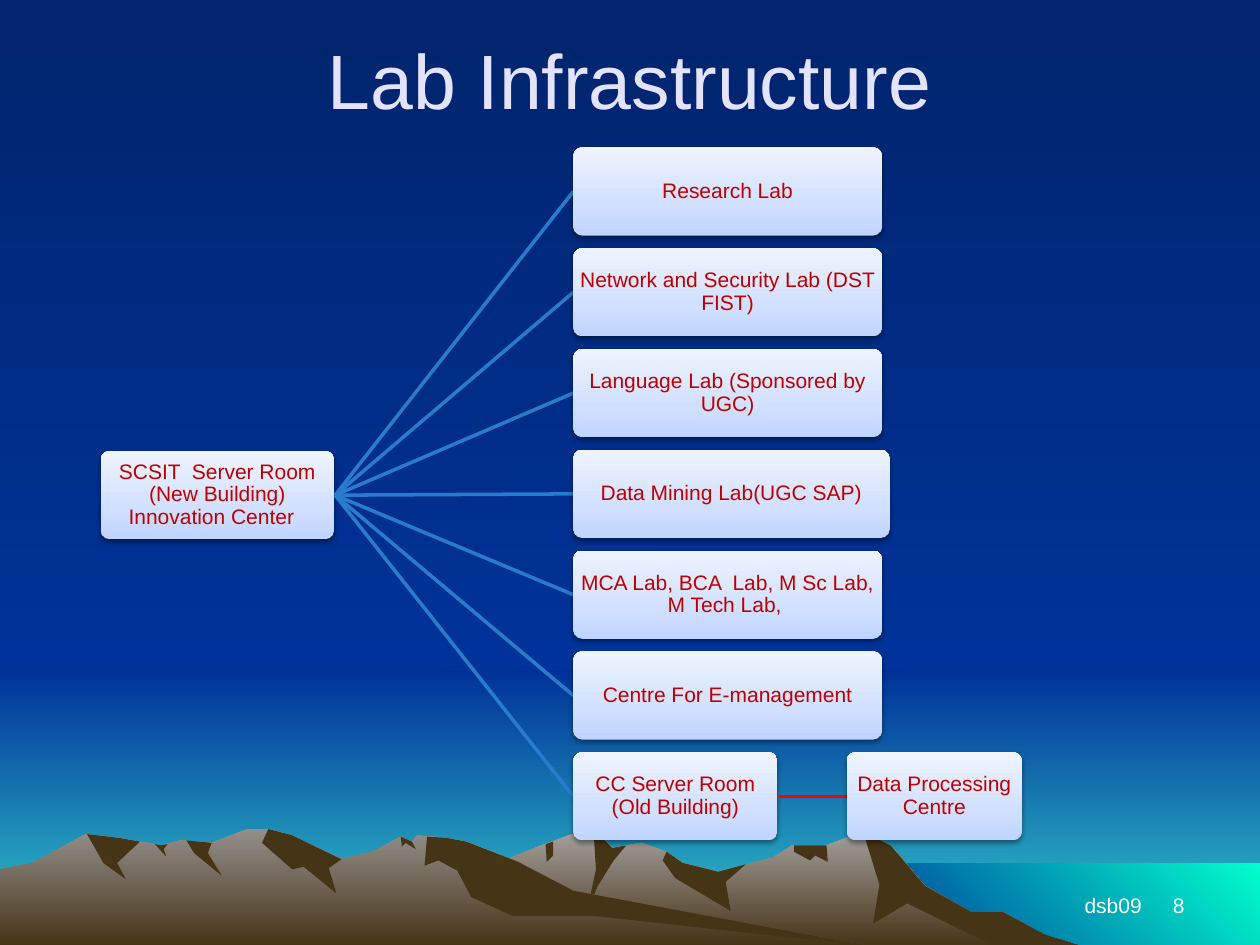
from copy import deepcopy

from lxml import etree
from pptx import Presentation
from pptx.dml.color import RGBColor
from pptx.enum import shapes, text
from pptx.oxml import ns
from pptx.util import Inches, Pt

NIGHT = RGBColor(0x00, 0x24, 0x6D)
BLUE = RGBColor(0x00, 0x33, 0x99)
TEAL = RGBColor(0x33, 0xCC, 0xCC)
AQUA = RGBColor(0x00, 0xFF, 0xCC)
STONE = RGBColor(0xA5, 0xA2, 0x9F)
SLATE = RGBColor(0x93, 0x8F, 0x8B)
BROWN = RGBColor(0x46, 0x34, 0x16)
LILAC = RGBColor(0xE3, 0xE3, 0xFF)
WHITE = RGBColor(0xFF, 0xFF, 0xFF)
CRIMSON = RGBColor(0xC0, 0x00, 0x00)
RED = RGBColor(0xFF, 0x00, 0x00)
LINK = RGBColor(0x29, 0x7B, 0xCC)
CARD = [(0, RGBColor(0xBF, 0xD4, 0xFF)), (0.35, RGBColor(0xD2, 0xE0, 0xFF)),
        (1, RGBColor(0xEE, 0xF3, 0xFF))]

WIDE, TALL = 10, 7.5
SHORE = 5.33
FLOOR = 7.51
GRAIN = 100
DOWN, RISE, SLANT = 270, 90, 45

HIGH = 0.7
STEP = 0.8
TOP = 1.17
LEFT = 4.55
HUB = (2.66, 3.93)
ANNEX = 6.72

LABS = [
    ("Research Lab", 2.45),
    ("Network and Security Lab (DST FIST)", 2.45),
    ("Language Lab (Sponsored by UGC)", 2.45),
    ("Data Mining Lab(UGC SAP)", 2.51),
    ("MCA Lab, BCA  Lab, M Sc Lab, M Tech Lab, ", 2.45),
    ("Centre For E-management", 2.45),
    ("CC Server Room (Old Building)", 1.62),
]

EAST = {2.58: 7.51, 3.27: 7.09, 3.55: 6.98, 4.05: 6.81, 4.3: 6.71, 4.65: 6.58,
        4.71: 6.58, 4.86: 6.73, 5.09: 6.69, 5.29: 6.76, 5.42: 6.85, 5.7: 6.92,
        6.13: 6.81, 6.29: 6.71, 6.56: 6.71, 6.85: 6.6, 7.07: 6.71, 7.34: 7.03,
        7.71: 7.24, 7.96: 7.24, 8.29: 7.42, 8.58: 7.51}
WEST = {0: 6.9, 0.26: 6.85, 0.46: 6.74, 0.68: 6.62, 0.94: 6.65, 1.28: 6.71,
        1.43: 6.67, 1.68: 6.69, 1.96: 6.58, 2.13: 6.58, 2.32: 6.63, 2.71: 6.82,
        2.96: 6.76, 3.18: 6.64, 3.27: 6.68, 3.31: 6.63, 3.54: 6.65, 3.7: 6.68,
        4.11: 6.84, 4.55: 7.07, 6.9: 7.51}

EASTERN = {
    (4.33, 4.39): [(4.39, 6.79), (4.34, 6.84)],
    (4.71, 4.97): [(4.87, 6.83), (4.74, 7.04), (4.65, 7.27), (4.73, 6.9)],
    (5.29, 5.92): [(5.76, 7), (5.8, 7.23), (5.36, 6.97), (5.26, 6.83)],
    (6.3, 6.56): [(6.57, 6.84), (6.47, 6.79), (6.43, 6.83), (6.3, 6.76)],
    (6.85, 8.58): [(7.92, 7.52), (7.2, 7.17), (6.93, 7.33), (6.98, 7.02)],
}
WESTERN = {
    (0.69, 1.11): [(0.93, 6.85), (1, 6.98), (0.82, 6.85), (0.77, 6.76)],
    (1.23, 1.33): [(1.3, 6.74), (1.32, 6.8)],
    (1.48, 1.68): [(1.65, 6.77), (1.76, 6.95), (1.54, 6.77)],
    (2.13, 2.71): [(2.61, 6.89), (2.67, 7.09), (2.41, 6.88), (2.32, 6.9),
                   (2.08, 6.69)],
    (3.18, 3.27): [(3.3, 6.74), (3.22, 6.69), (3.19, 6.72)],
    (3.39, 6.9): [(4.72, 7.27), (4.07, 7.27), (3.74, 7.12), (3.63, 6.91),
                  (3.48, 6.83), (3.37, 6.87)],
}
RANGES = [(EAST, STONE, EASTERN), (WEST, SLATE, WESTERN)]


def fade(fill, stops, angle):
    fill.gradient()
    fill.gradient_angle = angle
    for stop, (place, color) in zip(fill.gradient_stops, stops):
        stop.position = place
        stop.color.rgb = color


def blend(fill, first, last, angle):
    fade(fill, [(0, first), (1, last)], angle)


def bare(shape):
    shape.shadow.inherit = False
    shape.line.fill.background()
    return shape


def band(slide, box, first, last, angle):
    kind = shapes.MSO_SHAPE.RECTANGLE
    shape = bare(slide.shapes.add_shape(kind, *map(Inches, box)))
    blend(shape.fill, first, last, angle)


def trace(slide, points):
    grid = [(round(x * GRAIN), round(y * GRAIN)) for x, y in points]
    pen = slide.shapes.build_freeform(*grid[0], scale=Inches(1) / GRAIN)
    pen.add_line_segments(grid[1:], close=True)
    return bare(pen.convert_to_shape())


def level(sky, x):
    left = max(key for key in sky if key <= x)
    right = min(key for key in sky if key >= x)
    if left == right:
        return sky[x]
    share = (x - left) / (right - left)
    return sky[left] + share * (sky[right] - sky[left])


def crest(sky, start, end):
    inner = [x for x in sky if start < x < end]
    return [(x, level(sky, x)) for x in (start, *inner, end)]


def ridge(slide, sky, light, faces):
    first, last = min(sky), max(sky)
    base = [(last, FLOOR), (first, FLOOR)]
    rock = trace(slide, crest(sky, first, last) + base)
    blend(rock.fill, light, BROWN, DOWN)
    for (start, end), feet in faces.items():
        shade = trace(slide, crest(sky, start, end) + feet)
        shade.fill.solid()
        shade.fill.fore_color.rgb = BROWN


def write(frame, words, size, color, align, anchor):
    frame.word_wrap = True
    frame.vertical_anchor = anchor
    para = frame.paragraphs[0]
    para.alignment = align
    run = para.add_run()
    run.text = words
    run.font.name = "Arial"
    run.font.size = Pt(size)
    run.font.color.rgb = color
    return para


def label(slide, box, *style):
    write(slide.shapes.add_textbox(*map(Inches, box)).text_frame, *style)


def cast(shape):
    effect = shape.element.spPr.find(ns.qn("a:effectLst"))
    outer = etree.SubElement(effect, ns.qn("a:outerShdw"), blurRad=str(Pt(3.1)),
                             dist=str(Pt(1.6)), dir="5400000", rotWithShape="0")
    tint = etree.SubElement(outer, ns.qn("a:srgbClr"), val="000000")
    etree.SubElement(tint, ns.qn("a:alpha"), val="38000")


def node(slide, left, top, width, words):
    kind = shapes.MSO_SHAPE.ROUNDED_RECTANGLE
    box = map(Inches, (left, top, width, HIGH))
    shape = bare(slide.shapes.add_shape(kind, *box))
    shape.adjustments[0] = 0.1
    shape.fill.gradient()
    stops = shape.element.spPr.find(".//" + ns.qn("a:gsLst"))
    stops.append(deepcopy(stops[-1]))
    fade(shape.fill, CARD, RISE)
    cast(shape)
    frame = shape.text_frame
    frame.margin_left = frame.margin_right = Inches(0.01)
    frame.margin_top = frame.margin_bottom = Inches(0.01)
    para = write(frame, words, 12, CRIMSON, text.PP_ALIGN.CENTER,
                 text.MSO_ANCHOR.MIDDLE)
    para.line_spacing = 0.9


def link(slide, start, end, color):
    kind = shapes.MSO_CONNECTOR.STRAIGHT
    line = slide.shapes.add_connector(kind, *map(Inches, start + end))
    line.line.color.rgb = color
    line.line.width = Pt(2)
    etree.SubElement(line.element.spPr, ns.qn("a:effectLst"))


def scene(slide):
    blend(slide.background.fill, NIGHT, BLUE, DOWN)
    band(slide, (0, SHORE, WIDE, TALL - SHORE), BLUE, TEAL, DOWN)
    band(slide, (0, 0, WIDE, SHORE), NIGHT, BLUE, DOWN)
    band(slide, (6.83, 6.85, 3.17, 0.67), BLUE, AQUA, SLANT)
    for sky, light, faces in RANGES:
        ridge(slide, sky, light, faces)


def tree(slide):
    node(slide, 0.8, 3.58, 1.85,
         "SCSIT  Server Room (New Building) Innovation Center  ")
    for row, (words, width) in enumerate(LABS):
        top = TOP + row * STEP
        mid = top + HIGH / 2
        link(slide, HUB, (LEFT, mid), LINK)
        node(slide, LEFT, top, width, words)
    link(slide, (LEFT + width, mid), (ANNEX, mid), RED)
    node(slide, ANNEX, top, 1.39, "Data Processing Centre")


def main():
    deck = Presentation()
    deck.slide_width, deck.slide_height = Inches(WIDE), Inches(TALL)
    slide = deck.slides.add_slide(deck.slide_layouts[6])
    align, anchor = text.PP_ALIGN, text.MSO_ANCHOR
    scene(slide)
    label(slide, (0.5, 0.25, 9, 0.75), "Lab Infrastructure", 44, LILAC,
          align.CENTER, anchor.MIDDLE)
    label(slide, (8.5, 6.83, 0.67, 0.5), "dsb09", 12, WHITE,
          align.CENTER, anchor.BOTTOM)
    label(slide, (8.92, 6.83, 0.58, 0.5), "8", 12, WHITE,
          align.RIGHT, anchor.BOTTOM)
    tree(slide)
    deck.save("out.pptx")


if __name__ == "__main__":
    main()
